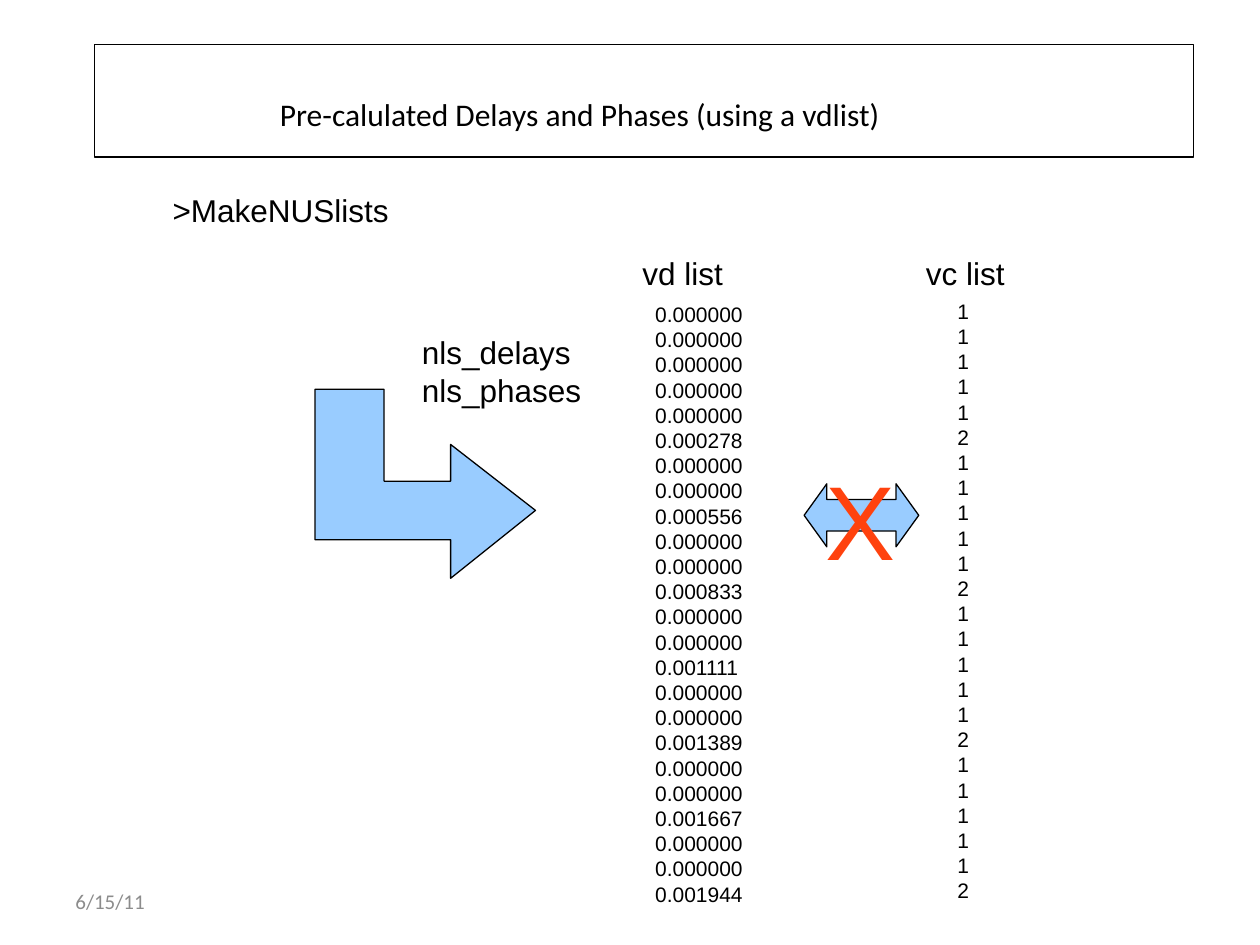
"""Build the slide on pre-calculated delays and phases."""
from pptx import Presentation, util as u
from pptx.dml.color import RGBColor
from pptx.enum import shapes, text

Pt = u.Pt
BLACK, BLUE, RED, GREY = "000000", "99CCFF", "FF420E", "8C8C8C"


def write(shape, words, size=18, font="Arial", color=BLACK, wrap=False,
          anchor=text.MSO_ANCHOR.TOP, left=7.2, top=3.6):
    frame = shape.text_frame
    frame.word_wrap = wrap
    frame.vertical_anchor = anchor
    frame.margin_left, frame.margin_top = Pt(left), Pt(top)
    frame.text = words
    for para in frame.paragraphs:
        para.alignment = text.PP_ALIGN.LEFT
        para.line_spacing = Pt(1.2 * size)
        for span in para.runs:
            span.font.size = Pt(size)
            span.font.name = font
            span.font.color.rgb = RGBColor.from_string(color)


def paint(shape, fill=None):
    shape.shadow.inherit = False
    if fill:
        shape.fill.solid()
        shape.fill.fore_color.rgb = RGBColor.from_string(fill)
    else:
        shape.fill.background()
    shape.line.color.rgb = RGBColor.from_string(BLACK)
    shape.line.width = Pt(0.75)


deck = Presentation()
deck.slide_width, deck.slide_height = Pt(720), Pt(540)
page = deck.slides.add_slide(deck.slide_layouts[6])

title = page.shapes.add_shape(
    shapes.MSO_SHAPE.RECTANGLE, Pt(54), Pt(25.5), Pt(628), Pt(64.2))
paint(title)
write(title, "Pre-calulated Delays and Phases (using a vdlist)",
      font="Calibri", wrap=True, left=106, top=29)

bent = page.shapes.build_freeform(Pt(257.5), Pt(254), scale=1.0)
bent.add_line_segments([
    (Pt(x), Pt(y)) for x, y in [
        (257.5, 275), (219.5, 275), (219.5, 222.5), (180, 222.5),
        (180, 308.5), (257.5, 308.5), (257.5, 330.5), (306, 291.7)]],
    close=True)
paint(bent.convert_to_shape(), BLUE)

double_arrow = page.shapes.add_shape(
    shapes.MSO_SHAPE.LEFT_RIGHT_ARROW, Pt(459.5), Pt(276.5), Pt(65.5), Pt(36))
double_arrow.adjustments[0] = 0.5
double_arrow.adjustments[1] = 0.36
paint(double_arrow, BLUE)

rows = range(24)
delays = "\n".join(
    f"{(row // 3 if row % 3 == 2 else 0) / 3600:.6f}" for row in rows)
counts = "\n".join("2" if row % 6 == 5 else "1" for row in rows)

for left, top, width, height, words, style in [
    (36, 500.5, 168, 28.5, "6/15/11",
     dict(size=12, font="Calibri", color=GREY, wrap=True,
          anchor=text.MSO_ANCHOR.MIDDLE)),
    (91.5, 105.5, 148, 27.5, ">MakeNUSlists", {}),
    (360, 141.5, 126, 27.5, "vd list", dict(wrap=True)),
    (367.3, 168.8, 65, 330, delays, dict(size=12)),
    (522, 141.5, 126, 27.5, "vc list", dict(wrap=True)),
    (540, 167, 21, 330, counts, dict(size=12)),
    (464.5, 256.5, 54, 74, "X", dict(size=60, color=RED)),
    (234, 186.7, 120, 47.5, "nls_delays\nnls_phases", dict(wrap=True)),
]:
    box = page.shapes.add_textbox(Pt(left), Pt(top), Pt(width), Pt(height))
    write(box, words, **style)

deck.save("out.pptx")
